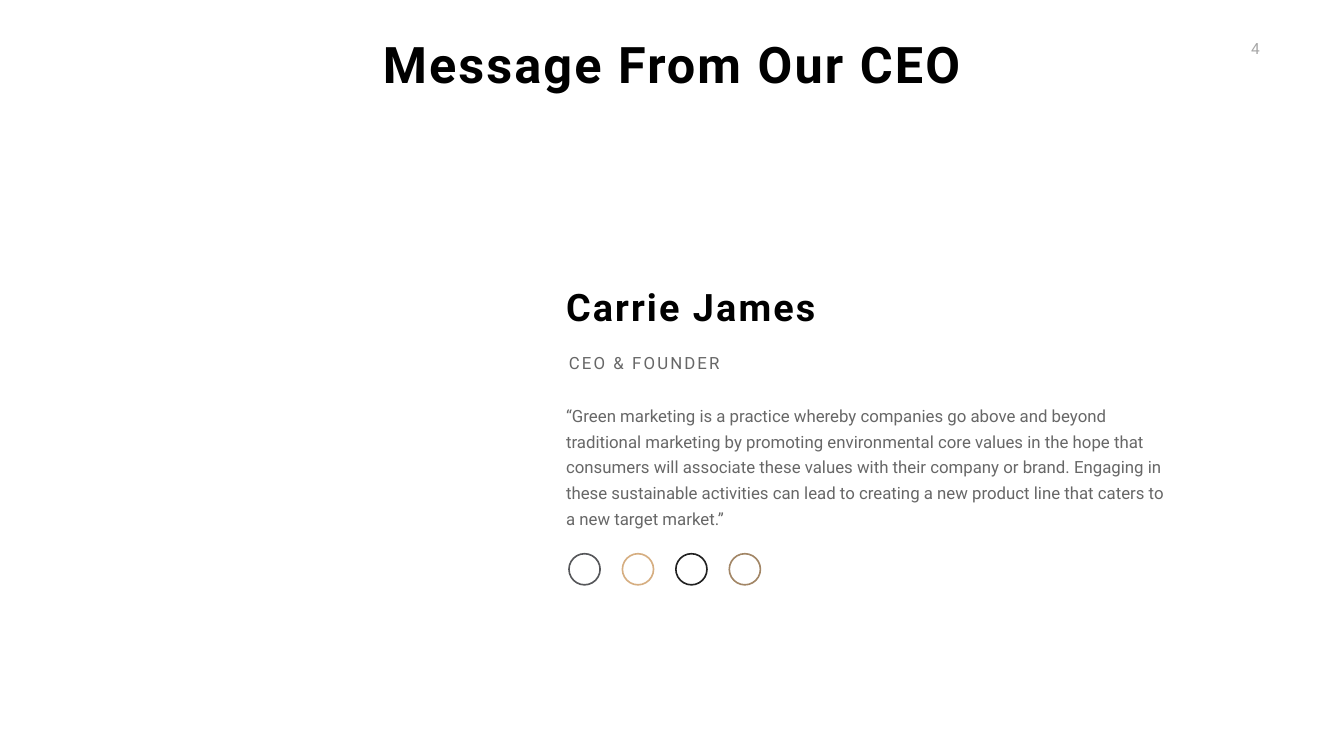
from pptx import Presentation
from pptx.dml.color import RGBColor
from pptx.enum.shapes import MSO_SHAPE
from pptx.enum.text import MSO_ANCHOR, MSO_AUTO_SIZE, PP_ALIGN
from pptx.util import Inches, Pt

RING = MSO_SHAPE.DONUT
GROW = MSO_AUTO_SIZE.SHAPE_TO_FIT_TEXT
TOP, MIDDLE, BOTTOM = MSO_ANCHOR.TOP, MSO_ANCHOR.MIDDLE, MSO_ANCHOR.BOTTOM
LEFT, CENTER, RIGHT = PP_ALIGN.LEFT, PP_ALIGN.CENTER, PP_ALIGN.RIGHT

FONT = "Roboto"
COLORS = {
    "heading": "000000",
    "body": "676767",
    "page": "A6A6A6",
    "slate": "56575A",
    "sand": "D6AE81",
    "ink": "212121",
    "bronze": "A28666",
}
TEXT_LEFT = 11.13
QUOTE = (
    "“Green marketing is a practice whereby companies go above and beyond "
    "traditional marketing by promoting environmental core values in the hope that "
    "consumers will associate these values with their company or brand. Engaging in "
    "these sustainable activities can lead to creating a new product line that "
    "caters to a new target market.”"
)


def set_all(target, values):
    for name, value in values.items():
        setattr(target, name, value)


def format_text(shape, text, size, color, bold=False, spacing=0, frame=None, paragraph=None):
    """Write one paragraph; spacing is the letter spacing in points."""
    text_frame = shape.text_frame
    set_all(text_frame, {"word_wrap": False, "auto_size": GROW,
                         "vertical_anchor": TOP, **(frame or {})})
    line = text_frame.paragraphs[0]
    set_all(line, {"alignment": LEFT, **(paragraph or {})})
    run = line.add_run()
    run.text = text
    set_all(run.font, {"name": FONT, "size": Pt(size), "bold": bold})
    run.font.color.rgb = RGBColor.from_string(COLORS[color])
    if spacing:
        run._r.get_or_add_rPr().set("spc", str(spacing * 100))


def add_title(slide, text):
    title = slide.shapes.title
    set_all(title, {"left": Inches(7.42), "top": Inches(0.61),
                    "width": Inches(11.82), "height": Inches(1.31)})
    format_text(title, text, 72, "heading", bold=True, spacing=3,
                paragraph={"alignment": CENTER})


def add_text(slide, box, text, size, color, **formats):
    shape = slide.shapes.add_textbox(*(Inches(length) for length in box))
    format_text(shape, text, size, color, **formats)


def add_social_rings(slide, colors, left=11.27, top=10.97, diameter=0.65, pitch=1.06):
    for index, color in enumerate(colors):
        ring = slide.shapes.add_shape(RING, Inches(left + index * pitch), Inches(top),
                                      Inches(diameter), Inches(diameter))
        ring.adjustments[0] = 0.05
        ring.shadow.inherit = False
        ring.fill.solid()
        ring.fill.fore_color.rgb = RGBColor.from_string(COLORS[color])
        ring.line.fill.background()


def main():
    deck = Presentation()
    set_all(deck, {"slide_width": Inches(26.66), "slide_height": Inches(15)})
    slide = deck.slides.add_slide(deck.slide_layouts.get_by_name("Title Only"))

    # Heading and page number
    add_title(slide, "Message From Our CEO")
    no_margins = {f"margin_{side}": 0 for side in ("left", "top", "right", "bottom")}
    add_text(slide, (24.62, 0.78, 0.37, 0.37), "4", 22, "page",
             frame=no_margins, paragraph={"alignment": RIGHT})

    # Name, role and quote
    add_text(slide, (TEXT_LEFT, 5.57, 5.23, 1.01), "Carrie James", 54, "heading",
             bold=True, spacing=3, frame={"vertical_anchor": BOTTOM})
    add_text(slide, (TEXT_LEFT, 6.95, 3.3, 0.5), "CEO & FOUNDER", 24, "body", spacing=3,
             frame={"vertical_anchor": MIDDLE}, paragraph={"alignment": CENTER})
    add_text(slide, (TEXT_LEFT, 7.88, 12.17, 2.65), QUOTE, 24, "body",
             frame={"word_wrap": True},
             paragraph={"line_spacing": Pt(37), "space_before": Pt(4.8)})

    # Social links
    add_social_rings(slide, ("slate", "sand", "ink", "bronze"))

    deck.save("out.pptx")


if __name__ == "__main__":
    main()
